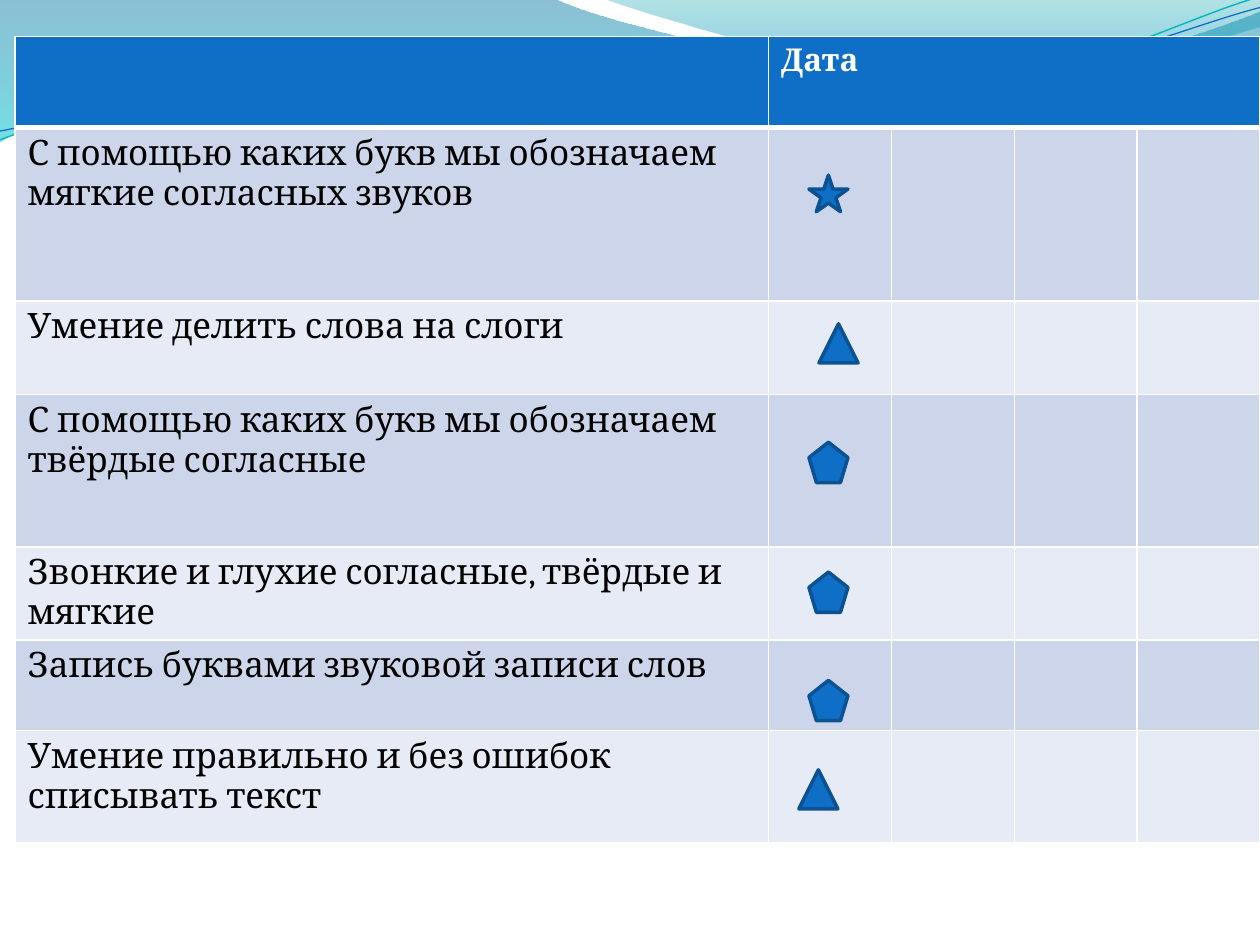
from lxml import etree
from pptx import Presentation
from pptx.dml.color import RGBColor
from pptx.enum.shapes import MSO_SHAPE
from pptx.oxml.ns import qn
from pptx.util import Inches, Pt

STAR = MSO_SHAPE.STAR_5_POINT
TRIANGLE = MSO_SHAPE.ISOSCELES_TRIANGLE
PENTAGON = MSO_SHAPE.REGULAR_PENTAGON
BLUE = "0F6FC6"


def color(value):
    return RGBColor.from_string(value)


def draw_wave(shapes, start, segments, closed):
    points = [(Inches(x), Inches(y)) for segment in segments
              for x, y in zip(segment[::2], segment[1::2])]
    builder = shapes.build_freeform(Inches(start[0]), Inches(start[1]))
    builder.add_line_segments(points, close=closed)
    shape = builder.convert_to_shape()
    shape.shadow.inherit = False
    vertices = iter(list(shape._element.iter(qn("a:lnTo"))))
    for segment in segments:
        first = next(vertices)
        if len(segment) == 6:
            curve = etree.Element(qn("a:cubicBezTo"))
            first.addprevious(curve)
            for vertex in (first, next(vertices), next(vertices)):
                curve.append(vertex[0])
                vertex.getparent().remove(vertex)
    return shape


presentation = Presentation()
presentation.slide_width = Inches(10)
presentation.slide_height = Inches(7.5)
slide = presentation.slides.add_slide(presentation.slide_layouts[6])
slide.background.fill.solid()
slide.background.fill.fore_color.rgb = color("FFFFFF")

filled_waves = [
    ((0, 0),
     [(4.4, -0.01), (4.76, 0.17, 6.64, 0.63, 7.58, 0.63),
      (8.53, 0.63, 9.58, 0.26, 10, 0.09), (10.01, 0.36),
      (9.83, 0.44, 8.7, 0.76, 7.46, 0.75), (6.22, 0.75, 3.82, 0.28, 2.57, 0.34),
      (1.29, 0.36, 0.46, 0.83, -0.01, 1.13)],
     [(0, "0074A1", 45), (1, "00C6CF", 55)]),
    ((4.79, -0.01),
     [(5.09, 0.11, 6.82, 0.62, 7.69, 0.65), (8.56, 0.69, 9.61, 0.32, 10, 0.21), (10, 0)],
     [(0, "00A1A9", 30), (0.8, "008BBF", 45)]),
]
for start, segments, stops in filled_waves:
    wave = draw_wave(slide.shapes, start, segments, True)
    wave.line.fill.background()
    wave.fill.gradient()
    wave.fill.gradient_angle = 270
    for stop, (position, value, opacity) in zip(wave.fill.gradient_stops, stops):
        stop.position = position
        stop.color.rgb = color(value)
    stop_colors = wave._element.spPr.iter(qn("a:srgbClr"))
    for stop_color, (position, value, opacity) in zip(stop_colors, stops):
        etree.SubElement(stop_color, qn("a:alpha")).set("val", str(opacity * 1000))

line_waves = [
    ((0, 1.11),
     [(0.48, 0.93, 1.58, 0.57, 2.77, 0.52), (3.95, 0.47, 5.93, 0.89, 7.13, 0.8),
      (8.33, 0.71, 9.38, 0.15, 9.98, -0.02)], "0AB8BF", 0.85),
    ((0, 1.04),
     [(0.47, 0.96, 1.64, 0.61, 2.83, 0.56), (4.03, 0.51, 5.97, 0.84, 7.17, 0.75),
      (8.36, 0.67, 9.41, 0.21, 10, 0.06)], BLUE, 0.75),
]
for start, segments, value, width in line_waves:
    wave = draw_wave(slide.shapes, start, segments, False)
    wave.fill.background()
    wave.line.color.rgb = color(value)
    wave.line.width = Pt(width)

skills = [
    "С помощью каких букв мы обозначаем мягкие согласных звуков",
    "Умение делить слова на слоги",
    "С помощью каких букв мы обозначаем твёрдые согласные",
    "Звонкие и глухие согласные, твёрдые и мягкие",
    "Запись буквами звуковой записи слов",
    "Умение правильно и без ошибок списывать текст",
]
row_heights = [0.72, 1.38, 0.74, 1.21, 0.74, 0.72, 0.89]
table_width = 9.88
skill_width = 5.98
column_widths = [skill_width] + [(table_width - skill_width) / 4] * 4
table = slide.shapes.add_table(
    len(row_heights), len(column_widths), Inches(0.12), Inches(0.29),
    Inches(table_width), Inches(sum(row_heights))).table
for column, width in zip(table.columns, column_widths):
    column.width = Inches(width)
for index, (row, height) in enumerate(zip(table.rows, row_heights)):
    row.height = Inches(height)
    fill_value = BLUE if index == 0 else ("E7EBF5", "CCD5EA")[index % 2]
    for cell in row.cells:
        properties = cell._tc.get_or_add_tcPr()
        for side in ("lnL", "lnR", "lnT", "lnB"):
            thick = (index, side) in ((0, "lnB"), (1, "lnT"))
            border = etree.SubElement(properties, qn("a:" + side))
            border.set("w", str(Pt(3 if thick else 1)))
            border_fill = etree.SubElement(border, qn("a:solidFill"))
            etree.SubElement(border_fill, qn("a:srgbClr")).set("val", "FFFFFF")
        cell.fill.solid()
        cell.fill.fore_color.rgb = color(fill_value)
table.cell(0, 1).merge(table.cell(0, 4))

entries = [(0, 1, "Дата")] + [(index, 0, skill) for index, skill in enumerate(skills, 1)]
for row_index, column_index, text in entries:
    header = row_index == 0
    run = table.cell(row_index, column_index).text_frame.paragraphs[0].add_run()
    run.text = text
    run.font.name = "Cambria"
    run.font.size = Pt(18 if header else 20)
    run.font.bold = header
    run.font.color.rgb = color("FFFFFF" if header else "000000")

marks = [
    (TRIANGLE, 6.5, 2.57, 0.31),
    (STAR, 6.42, 1.39, 0.29),
    (PENTAGON, 6.42, 3.51, 0.32),
    (PENTAGON, 6.42, 4.54, 0.32),
    (PENTAGON, 6.42, 5.4, 0.32),
    (TRIANGLE, 6.34, 6.11, 0.31),
]
for kind, left, top, height in marks:
    mark = slide.shapes.add_shape(kind, Inches(left), Inches(top), Inches(0.31), Inches(height))
    mark.shadow.inherit = False
    mark.fill.solid()
    mark.fill.fore_color.rgb = color(BLUE)
    mark.line.color.rgb = color("0B5292")
    mark.line.width = Pt(2)

presentation.save("out.pptx")
